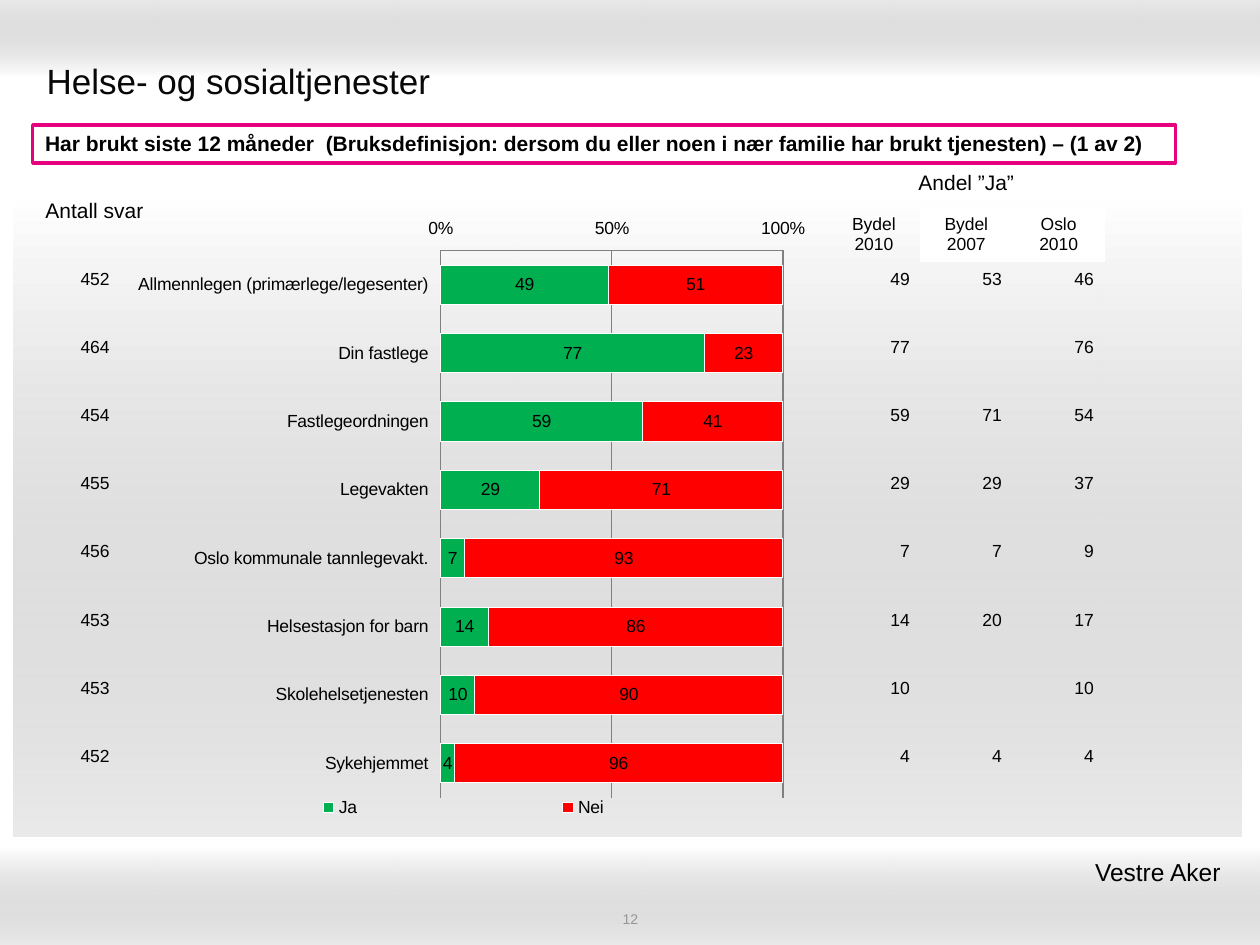
from lxml import etree
from pptx import Presentation
from pptx.chart.data import CategoryChartData
from pptx.dml.color import RGBColor
from pptx.enum.chart import (XL_CHART_TYPE as ChartType, XL_LEGEND_POSITION as LegendPos,
                             XL_TICK_LABEL_POSITION as LabelPos, XL_TICK_MARK as Tick)
from pptx.enum.shapes import MSO_SHAPE as Shape
from pptx.enum.text import MSO_ANCHOR as Anchor, PP_ALIGN as Align
from pptx.oxml import parse_xml
from pptx.oxml.ns import nsdecls, qn
from pptx.util import Pt

BLACK = RGBColor(0x00, 0x00, 0x00)
WHITE = RGBColor(0xFF, 0xFF, 0xFF)
TITLE_INK = RGBColor(0x08, 0x08, 0x08)
PAGE_GREY = RGBColor(0x96, 0x96, 0x96)
BAND_GREY = RGBColor(0x99, 0x99, 0x99)
GRID_GREY = RGBColor(0x80, 0x80, 0x80)
MAGENTA = RGBColor(0xE7, 0x00, 0x7E)
GREEN = RGBColor(0x00, 0xB0, 0x50)
RED = RGBColor(0xFF, 0x00, 0x00)
NO_TABLE_STYLE = "{2D5ABB26-0587-4C30-8999-92F81FD0307C}"
ROW_HEIGHT = 38.9

# service, number of answers, used 2010, district 2007, city 2010
SERVICES = [
    ("Allmennlegen (primærlege/legesenter)", 452, 49, 53, 46),
    ("Din fastlege", 464, 77, "", 76),
    ("Fastlegeordningen", 454, 59, 71, 54),
    ("Legevakten", 455, 29, 29, 37),
    ("Oslo kommunale tannlegevakt.", 456, 7, 7, 9),
    ("Helsestasjon for barn", 453, 14, 20, 17),
    ("Skolehelsetjenesten", 453, 10, "", 10),
    ("Sykehjemmet", 452, 4, 4, 4),
]


def points(box):
    return [Pt(length) for length in box]


def set_font(font, size, color=BLACK, bold=False):
    for name, value in dict(name="Arial", size=Pt(size), bold=bold, italic=False).items():
        setattr(font, name, value)
    font.color.rgb = color


def write(frame, text, size, align, color=BLACK, bold=False):
    frame.text = text
    for paragraph in frame.paragraphs:
        paragraph.alignment = align
        for run in paragraph.runs:
            set_font(run.font, size, color, bold)


def add_band(slide, box, angle):
    """Soft grey gradient; the grey end is 20 % opaque."""
    band = slide.shapes.add_shape(Shape.RECTANGLE, *points(box))
    band.shadow.inherit = False
    band.line.fill.background()
    band.fill.gradient()
    band.fill.gradient_angle = angle
    for stop, color, position in zip(band.fill.gradient_stops, (WHITE, BAND_GREY), (0, 1)):
        stop.color.rgb = color
        stop.position = position
    grey = list(band._element.spPr.iter(qn("a:srgbClr")))[-1]
    etree.SubElement(grey, qn("a:alpha")).set("val", "20000")


def add_title(slide, box):
    title = slide.shapes.title
    title.left, title.top, title.width, title.height = points(box)
    title.text_frame.vertical_anchor = Anchor.MIDDLE
    write(title.text_frame, "Helse- og sosialtjenester", 20, Align.LEFT, TITLE_INK)
    slide.shapes._spTree.append(title._element)  # in front of the bands


def add_banner(slide, box):
    banner = slide.shapes.add_shape(Shape.RECTANGLE, *points(box))
    banner.shadow.inherit = False
    banner.fill.solid()
    banner.fill.fore_color.rgb = WHITE
    banner.line.color.rgb = MAGENTA
    banner.line.width = Pt(2)
    banner.text_frame.vertical_anchor = Anchor.TOP
    write(banner.text_frame, "Har brukt siste 12 måneder  (Bruksdefinisjon: dersom du eller noen "
          "i nær familie har brukt tjenesten) – (1 av 2)", 12, Align.LEFT, bold=True)


def add_text(slide, box, text, size, align, color=BLACK, anchor=Anchor.TOP):
    frame = slide.shapes.add_textbox(*points(box)).text_frame
    frame.word_wrap = True
    frame.vertical_anchor = anchor
    write(frame, text, size, align, color)


def set_layout(parent, before, x, y, w, h, inner=False):
    """Fix a chart part at fractions of the chart area."""
    for old in parent.findall(qn("c:layout")):
        parent.remove(old)
    target = '<c:layoutTarget val="inner"/>' if inner else ""
    sizes = "".join(f'<c:{tag} val="{value}"/>' for tag, value in zip("xywh", (x, y, w, h)))
    layout = parse_xml(f'<c:layout {nsdecls("c")}><c:manualLayout>{target}<c:xMode val="edge"/>'
                       f'<c:yMode val="edge"/>{sizes}</c:manualLayout></c:layout>')
    parent.find(qn(before)).addprevious(layout)


def add_usage_chart(slide, box):
    data = CategoryChartData()
    data.categories = [service[0] for service in SERVICES]
    data.add_series("Ja", [service[2] for service in SERVICES])
    data.add_series("Nei", [100 - service[2] for service in SERVICES])
    chart = slide.shapes.add_chart(ChartType.BAR_STACKED, *points(box), data).chart
    chart.has_title = False
    set_font(chart.font, 10)

    # Bars
    plot = chart.plots[0]
    plot.gap_width, plot.overlap, plot.vary_by_categories = 75, 100, False
    for series, color in zip(plot.series, (GREEN, RED)):
        series.format.fill.solid()
        series.format.fill.fore_color.rgb = color
        series.format.line.color.rgb = WHITE
        labels = series.data_labels
        for name, value in dict(show_value=True, number_format="0",
                                number_format_is_linked=False).items():
            setattr(labels, name, value)
        set_font(labels.font, 10)

    # Axes
    services, percent = chart.category_axis, chart.value_axis
    axis_formats = {
        services: dict(reverse_order=True, major_tick_mark=Tick.NONE),
        percent: dict(minimum_scale=0, maximum_scale=100, major_unit=50,
                      has_major_gridlines=True, major_tick_mark=Tick.INSIDE),
    }
    for axis, formats in axis_formats.items():
        for name, value in formats.items():
            setattr(axis, name, value)
        axis.minor_tick_mark = Tick.NONE
        axis.tick_label_position = LabelPos.LOW
        axis.format.line.color.rgb = GRID_GREY
    percent.major_gridlines.format.line.color.rgb = GRID_GREY
    percent.tick_labels.number_format = "General\\%"
    percent.tick_labels.number_format_is_linked = False

    # Legend and plot area
    chart.has_legend = True
    chart.legend.position = LegendPos.BOTTOM
    chart.legend.include_in_layout = False
    set_font(chart.legend.font, 10)
    set_layout(chart.legend._element, "c:overlay", 0, 0.91, 0.98, 0.05)
    set_layout(chart._chartSpace.chart.plotArea, "c:barChart", 0.457, 0.07, 0.493, 0.85, inner=True)


def add_grid(slide, box, rows, heights, align, size=10):
    """Plain table with equal columns and no style."""
    graphic = slide.shapes.add_table(len(rows), len(rows[0]), *points(box))
    table = graphic.table
    table.first_row = table.horz_banding = False
    table._tbl.tblPr.find(qn("a:tableStyleId")).text = NO_TABLE_STYLE
    for table_row, height, values in zip(table.rows, heights, rows):
        table_row.height = Pt(height)
        for cell, value in zip(table_row.cells, values):
            cell.vertical_anchor = Anchor.MIDDLE
            cell.fill.background()
            write(cell.text_frame, str(value), size, align)
    return table


def add_share_header(slide, box):
    heading = "Andel ”Ja”"
    rows = [[heading, "", ""], ["Bydel\n2010", "Bydel\n2007", "Oslo\n2010"]]
    table = add_grid(slide, box, rows, (26.9, 30.5), Align.CENTER)
    table.cell(0, 0).merge(table.cell(0, 2))
    write(table.cell(0, 0).text_frame, heading, 12, Align.CENTER)
    for column in (1, 2):
        fill = table.cell(1, column).fill
        fill.solid()
        fill.fore_color.rgb = WHITE


def main():
    deck = Presentation()
    deck.slide_width, deck.slide_height = Pt(720), Pt(540)
    slide = deck.slides.add_slide(deck.slide_layouts[5])

    # Background
    add_band(slide, (0, 0, 720, 44.6), 90)
    add_band(slide, (0, 483.8, 720, 56.2), 270)
    add_band(slide, (7.9, 112.3, 701.3, 365.8), 270)

    # Headings
    add_title(slide, (19.4, 25.9, 680.4, 39.6))
    add_text(slide, (246.2, 519.8, 228.2, 10.1), "12", 8, Align.CENTER, PAGE_GREY, Anchor.MIDDLE)
    add_banner(slide, (18.7, 71.3, 653, 21.8))

    # Chart and the tables beside it
    add_usage_chart(slide, (70.6, 117.4, 396.7, 367.9))
    heights = [ROW_HEIGHT] * len(SERVICES)
    add_grid(slide, (474.5, 140.4, 157.7, sum(heights)),
             [service[2:] for service in SERVICES], heights, Align.RIGHT)
    add_share_header(slide, (473, 91.4, 158.4, 57.4))
    add_grid(slide, (2.9, 99.4, 102.2, 42.5), [["Antall svar"]], [42.5], Align.CENTER, 12)
    add_text(slide, (439.2, 486, 269.3, 24.5), "Vestre Aker ", 14, Align.RIGHT)
    add_grid(slide, (18.7, 140.4, 51.1, sum(heights)),
             [service[1:2] for service in SERVICES], heights, Align.RIGHT)

    deck.save("out.pptx")


if __name__ == "__main__":
    main()
